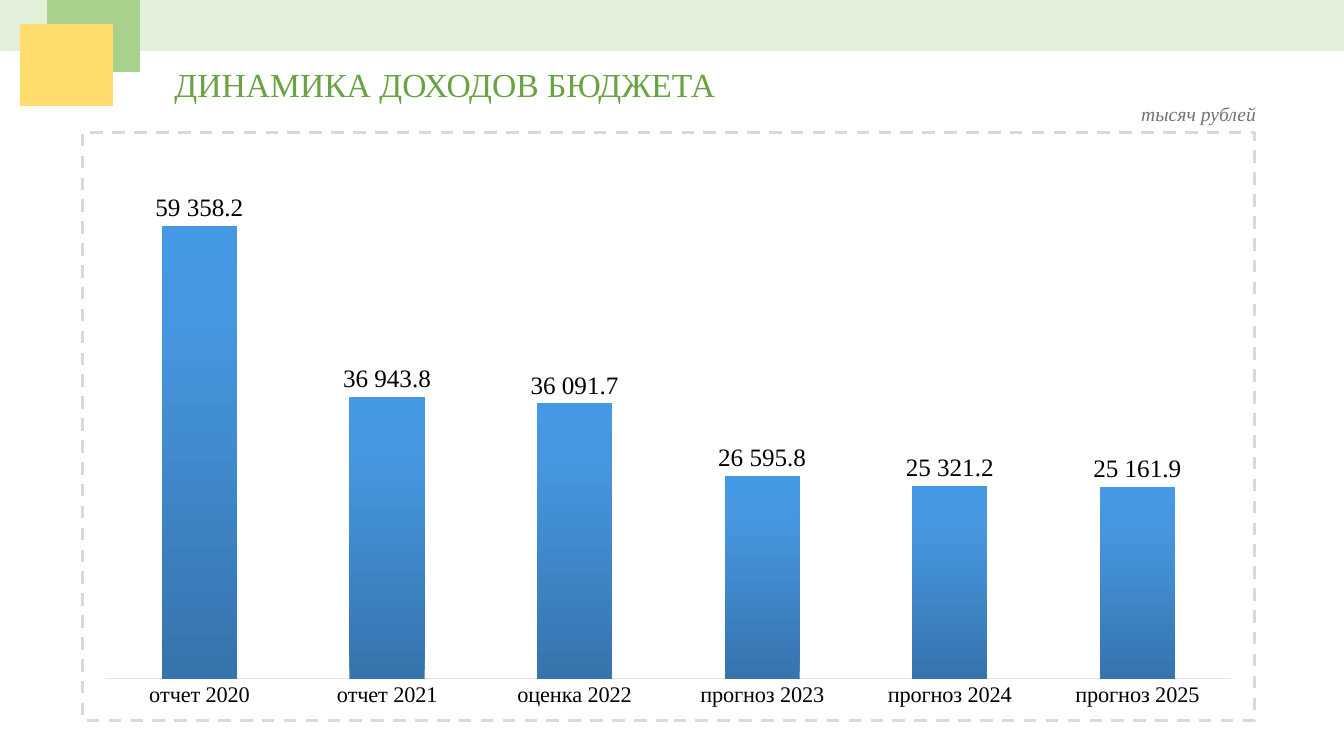
"""Build the slide with a column chart of budget revenue by year."""
import copy

import pptx
import pptx.chart.data
import pptx.dml.color
import pptx.enum.chart
import pptx.enum.dml
import pptx.enum.shapes
import pptx.enum.text
import pptx.oxml
import pptx.oxml.ns
import pptx.util

Inches, Pt = pptx.util.Inches, pptx.util.Pt
RGB = pptx.dml.color.RGBColor

FONT = "Times New Roman"
GREEN = RGB(0x6A, 0xA3, 0x43)
PALE = RGB(0xE2, 0xF0, 0xD9)
LEAF = RGB(0xA9, 0xD1, 0x8E)
GOLD = RGB(0xFF, 0xDC, 0x6D)
GRAY = RGB(0x76, 0x71, 0x71)
BLACK = RGB(0, 0, 0)
AXIS = RGB(0xE0, 0xE5, 0xEB)
EDGE = RGB(0xD9, 0xD9, 0xD9)
STOPS = [
    (0, RGB(0x36, 0x74, 0xAD)),
    (0.8, RGB(0x46, 0x97, 0xE0)),
    (1, RGB(0x44, 0x98, 0xE4)),
]

TITLE = "ДИНАМИКА ДОХОДОВ БЮДЖЕТА"
UNIT = "тысяч рублей"
SALES = {
    "отчет 2020": 59358.2,
    "отчет 2021": 36943.8,
    "оценка 2022": 36091.7,
    "прогноз 2023": 26595.8,
    "прогноз 2024": 25321.2,
    "прогноз 2025": 25161.9,
}
FORMAT = r"#\ ##0.0"
BLOCKS = [
    (0, 0, 13.33, 0.5, PALE),
    (0.47, 0, 0.91, 0.71, LEAF),
    (0.21, 0.25, 0.9, 0.8, GOLD),
]
PLOT = {"x": 0.02, "y": 0.02, "w": 0.96, "h": 0.91}


def style(font, size, color, name=FONT, italic=False):
    """Set the look of a font."""
    font.name, font.size, font.italic = name, Pt(size), italic
    font.color.rgb = color


def write(shape, text, box, **look):
    """Place a shape and fill it with one line of formatted text."""
    shape.left, shape.top, shape.width, shape.height = map(Inches, box)
    frame = shape.text_frame
    frame.word_wrap = False
    frame.auto_size = pptx.enum.text.MSO_AUTO_SIZE.SHAPE_TO_FIT_TEXT
    frame.vertical_anchor = pptx.enum.text.MSO_ANCHOR.TOP
    line = frame.paragraphs[0]
    line.alignment = pptx.enum.text.PP_ALIGN.LEFT
    run = line.add_run()
    run.text = text
    style(run.font, **look)


def block(slide, left, top, width, height, color):
    """Draw a plain filled rectangle."""
    shape = slide.shapes.add_shape(
        pptx.enum.shapes.MSO_SHAPE.RECTANGLE,
        *map(Inches, (left, top, width, height)))
    shape.shadow.inherit = False
    shape.fill.solid()
    shape.fill.fore_color.rgb = color
    shape.line.color.rgb = color
    shape.line.width = Pt(1)


def frame(chart):
    """Add the dashed border and fix the plot area."""
    space = pptx.oxml.ns.nsdecls("c", "a")
    edge = pptx.oxml.parse_xml(
        f'<c:spPr {space}><a:noFill/><a:ln w="{Pt(2.25)}"><a:solidFill>'
        f'<a:srgbClr val="{EDGE}"/></a:solidFill><a:prstDash val="dash"/>'
        '</a:ln></c:spPr>')
    chart.element.xpath("c:txPr")[0].addprevious(edge)
    area = chart.element.xpath("c:chart/c:plotArea")[0]
    for old in area.xpath("c:layout"):
        area.remove(old)
    modes = "".join(f'<c:{k}Mode val="edge"/>' for k in "xy")
    sizes = "".join(f'<c:{k} val="{v}"/>' for k, v in PLOT.items())
    area.insert(0, pptx.oxml.parse_xml(
        f'<c:layout {space}><c:manualLayout><c:layoutTarget val="inner"/>'
        f'{modes}{sizes}</c:manualLayout></c:layout>'))


def graph(slide):
    """Add the column chart."""
    kinds = pptx.enum.chart
    data = pptx.chart.data.CategoryChartData()
    data.categories = list(SALES)
    data.add_series("Series 1", list(SALES.values()))
    chart = slide.shapes.add_chart(
        kinds.XL_CHART_TYPE.COLUMN_CLUSTERED,
        *map(Inches, (0.8, 1.3, 11.66, 5.86)), data).chart
    style(chart.font, 10, BLACK, "Calibri")
    chart.has_legend = chart.has_title = False

    value = chart.value_axis
    value.visible = value.has_major_gridlines = False
    value.minimum_scale, value.maximum_scale = 0, 70000
    value.tick_labels.number_format = FORMAT
    value.tick_labels.number_format_is_linked = False
    years = chart.category_axis
    years.major_tick_mark = kinds.XL_TICK_MARK.NONE
    years.format.line.color.rgb = AXIS
    years.format.line.width = Pt(0.75)
    style(years.tick_labels.font, 16, BLACK)

    plot = chart.plots[0]
    plot.vary_by_categories = False
    plot.gap_width, plot.overlap = 150, -25
    bars = plot.series[0]
    bars.invert_if_negative = False
    fill = bars.format.fill
    fill.gradient()
    fill.gradient_angle = 90
    stops = chart.element.xpath(".//a:gsLst")[0]
    stops.append(copy.deepcopy(stops[-1]))
    for stop, (place, color) in zip(fill.gradient_stops, STOPS):
        stop.position = place
        stop.color.rgb = color
    labels = bars.data_labels
    labels.show_value = True
    labels.position = kinds.XL_LABEL_POSITION.OUTSIDE_END
    labels.number_format = FORMAT
    labels.number_format_is_linked = False
    style(labels.font, 18, BLACK)
    frame(chart)


def main():
    """Build and save the deck."""
    deck = pptx.Presentation()
    deck.slide_width, deck.slide_height = Inches(13.33), Inches(7.5)
    slide = deck.slides.add_slide(deck.slide_layouts[5])
    write(slide.shapes.title, TITLE, (1.63, 0.58, 5.62, 0.5),
          size=24, color=GREEN)
    for item in BLOCKS:
        block(slide, *item)
    graph(slide)
    note = slide.shapes.add_textbox(0, 0, 0, 0)
    write(note, UNIT, (11.22, 0.96, 1.39, 0.34),
          size=14, color=GRAY, italic=True)
    deck.save("out.pptx")


if __name__ == "__main__":
    main()
